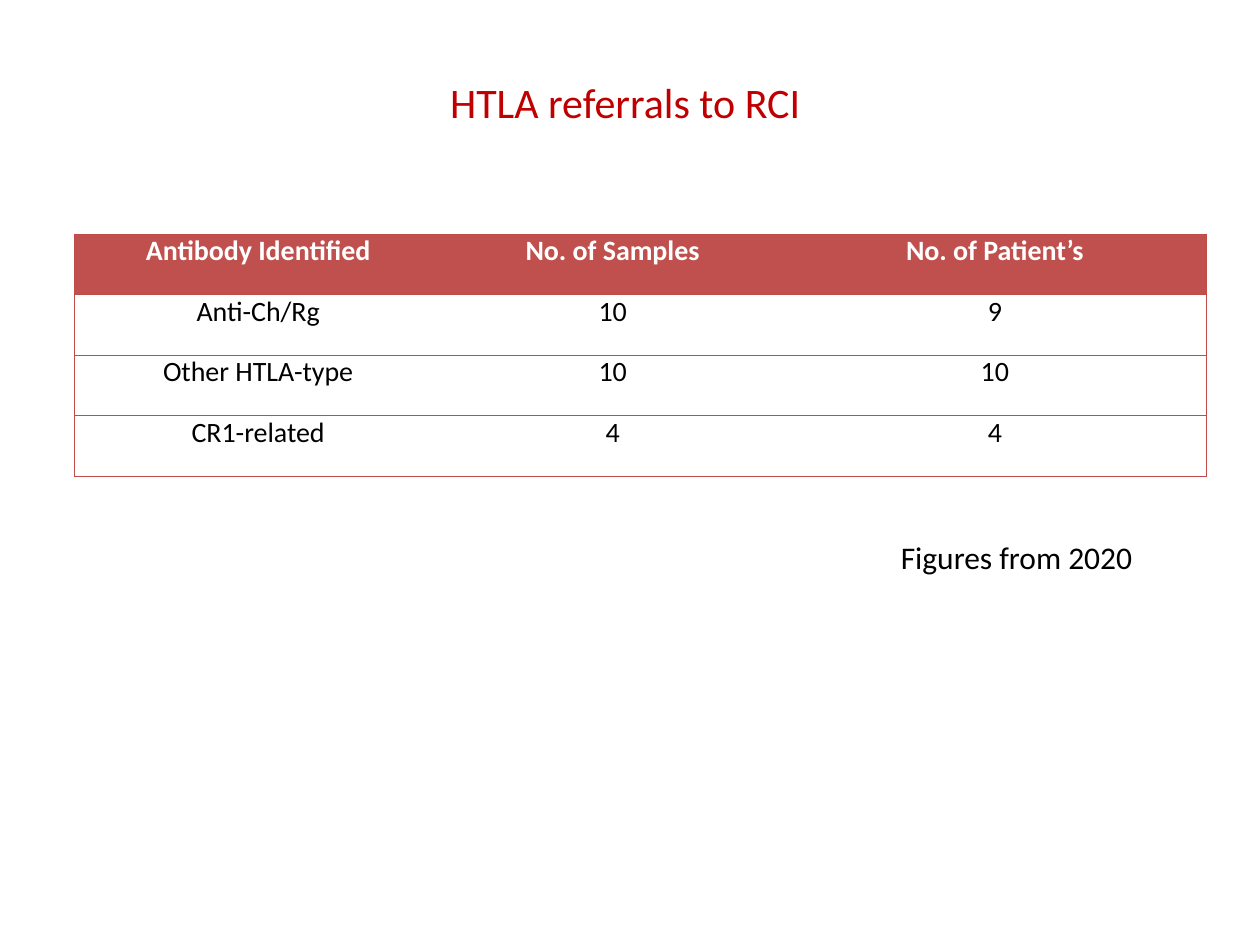
from dataclasses import dataclass

from lxml.etree import SubElement
from pptx import Presentation
from pptx.dml.color import RGBColor
from pptx.enum.text import MSO_ANCHOR as Anchor, PP_ALIGN as Align
from pptx.oxml.ns import qn
from pptx.util import Cm, Pt

COLOURS = {
    "title": "C00000",
    "header": "C0504D",
    "border": "BF4C48",
    "text": "000000",
    "header_text": "FFFFFF",
}
FONT = "Calibri"
COLUMN_WIDTHS = (7.41, 6.88, 8.53)
ROW_HEIGHT = 1.22


@dataclass(frozen=True)
class Referral:
    antibody: str
    samples: str
    patients: str

    def values(self) -> tuple:
        return self.antibody, self.samples, self.patients


REFERRALS = (
    Referral("Antibody Identified", "No. of Samples", "No. of Patient’s"),
    Referral("Anti-Ch/Rg", "10", "9"),
    Referral("Other HTLA-type", "10", "10"),
    Referral("CR1-related", "4", "4"),
)


def colour(name: str) -> RGBColor:
    return RGBColor.from_string(COLOURS[name])


def write(frame, text: str, *, size: float, fill: str = "text",
          bold: bool = False, align=Align.LEFT) -> None:
    para = frame.paragraphs[0]
    para.alignment = align
    span = para.add_run()
    span.text = text
    span.font.name = FONT
    span.font.size = Pt(size)
    span.font.bold = bold
    span.font.color.rgb = colour(fill)


def add_text(page, text: str, left: float, top: float, width: float,
             height: float, *, anchor=Anchor.TOP, **style) -> None:
    box = page.shapes.add_textbox(Cm(left), Cm(top), Cm(width), Cm(height))
    box.text_frame.word_wrap = True
    box.text_frame.vertical_anchor = anchor
    write(box.text_frame, text, **style)


def set_borders(cell, visible: dict) -> None:
    properties = cell._tc.get_or_add_tcPr()
    for side, shown in visible.items():
        line = SubElement(properties, qn(f"a:ln{side}"), w=str(Pt(0.75)))
        if shown:
            fill = SubElement(line, qn("a:solidFill"))
            SubElement(fill, qn("a:srgbClr"), val=COLOURS["border"])
        else:
            SubElement(line, qn("a:noFill"))


def add_referral_table(page, left: float, top: float) -> None:
    rows, columns = len(REFERRALS), len(COLUMN_WIDTHS)
    table = page.shapes.add_table(
        rows, columns, Cm(left), Cm(top),
        Cm(sum(COLUMN_WIDTHS)), Cm(ROW_HEIGHT * rows)).table
    for column, width in zip(table.columns, COLUMN_WIDTHS):
        column.width = Cm(width)
    for r, referral in enumerate(REFERRALS):
        table.rows[r].height = Cm(ROW_HEIGHT)
        header = r == 0
        for c, text in enumerate(referral.values()):
            cell = table.cell(r, c)
            cell.margin_left = cell.margin_right = Cm(0.18)
            cell.margin_top = cell.margin_bottom = 0
            set_borders(cell, {"L": c == 0, "R": c == columns - 1,
                               "T": True, "B": True})
            if header:
                cell.fill.solid()
                cell.fill.fore_color.rgb = colour("header")
            else:
                cell.fill.background()
            write(cell.text_frame, text, size=16, bold=header,
                  fill="header_text" if header else "text",
                  align=Align.CENTER)


def main() -> None:
    deck = Presentation()
    deck.slide_width, deck.slide_height = Cm(25.4), Cm(19.05)
    page = deck.slides.add_slide(deck.slide_layouts[6])
    add_text(page, "HTLA referrals to RCI ", 1.27, 0.76, 22.86, 2.57,
             anchor=Anchor.MIDDLE, size=24, fill="title", align=Align.CENTER)
    add_referral_table(page, 1.5, 4.72)
    add_text(page, "Figures from 2020", 17.91, 10.72, 6.2, 1.02, size=18)
    deck.save("out.pptx")


if __name__ == "__main__":
    main()
